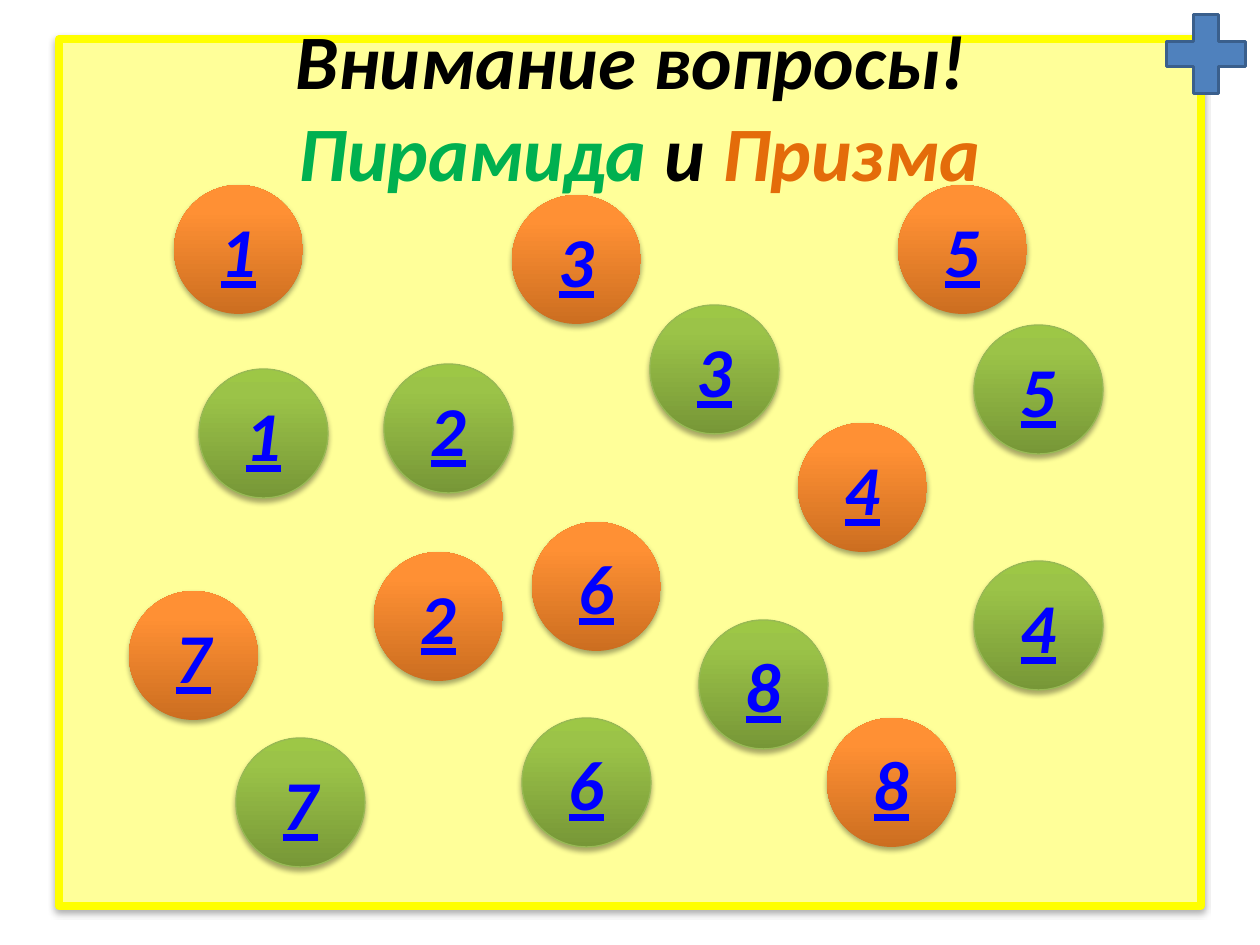
from lxml import etree
from pptx import Presentation
from pptx.dml.color import RGBColor
from pptx.enum.shapes import MSO_SHAPE
from pptx.enum.text import MSO_ANCHOR, MSO_AUTO_SIZE, PP_ALIGN
from pptx.oxml import parse_xml
from pptx.oxml.ns import nsdecls, qn
from pptx.util import Emu, Pt

RECTANGLE, OVAL, PLUS = MSO_SHAPE.RECTANGLE, MSO_SHAPE.OVAL, MSO_SHAPE.MATH_PLUS
MIDDLE, CENTER, NO_FIT = MSO_ANCHOR.MIDDLE, PP_ALIGN.CENTER, MSO_AUTO_SIZE.NONE
PX = 914400 / 126
BALL = 129


def color(hex_code):
    return RGBColor.from_string(hex_code)


def add_shadow(shape, blur, distance, opacity):
    shape.shadow.inherit = False
    effects = shape._element.spPr.find(qn("a:effectLst"))
    shadow = etree.SubElement(effects, qn("a:outerShdw"), blurRad=str(Pt(blur)),
                              dist=str(Pt(distance)), dir="5400000", rotWithShape="0")
    black = etree.SubElement(shadow, qn("a:srgbClr"), val="000000")
    etree.SubElement(black, qn("a:alpha"), val=str(opacity * 1000))


prs = Presentation()
prs.slide_width, prs.slide_height = Emu(int(1260 * PX)), Emu(int(945 * PX))
slide = prs.slides.add_slide(prs.slide_layouts[5])
shapes = slide.shapes

# Yellow panel, behind the title
panel = shapes.add_shape(RECTANGLE, *[Emu(int(v * PX)) for v in (59, 39, 1142, 867)])
panel.fill.solid()
panel.fill.fore_color.rgb = color("FFFF99")
panel.line.color.rgb = color("FFFF00")
panel.line.width = Pt(4.5)
add_shadow(panel, 3.5, 2.2, 32)

# Title
title = shapes.title
title._element.addprevious(panel._element)
title.left, title.top, title.width, title.height = [
    Emu(int(v * PX)) for v in (64, 26, 1134, 158)]
heading = title.text_frame
heading.auto_size = NO_FIT
heading.vertical_anchor = MIDDLE
line = heading.paragraphs[0]
line.alignment = CENTER
for words, hue in [("Внимание вопросы!", "000000"), (" Пирамида ", "00B050"),
                   ("и ", "000000"), ("Призма", "E46C0A")]:
    run = line.add_run()
    run.text = words
    run.font.name, run.font.size = "Calibri", Pt(44)
    run.font.bold = run.font.italic = True
    run.font.color.rgb = color(hue)
    if words.endswith("!"):
        line.add_line_break()

# Question balls: gradient from the bottom up, outline, (number, left, top)
prism = (["CC6E20", "FF9034", "FF9136"], None, [
    (5, 898, 185), (6, 532, 522), (8, 827, 718), (7, 129, 591),
    (3, 512, 195), (4, 798, 423), (2, 374, 552), (1, 174, 185)])
pyramid = (["779737", "9BC348", "9DC746"], "98B955", [
    (5, 974, 325), (6, 522, 718), (8, 699, 620), (7, 236, 738),
    (3, 650, 305), (4, 974, 561), (2, 384, 364), (1, 199, 369)])

for gradient, outline, questions in (prism, pyramid):
    stops = "".join(f'<a:gs pos="{pos}"><a:srgbClr val="{hue}"/></a:gs>'
                    for pos, hue in zip((0, 80000, 100000), gradient))
    for number, left, top in questions:
        ball = shapes.add_shape(OVAL, *[Emu(int(v * PX)) for v in (left, top, BALL, BALL)])
        ball._element.spPr.find(qn("a:prstGeom")).addnext(parse_xml(
            f'<a:gradFill {nsdecls("a")} rotWithShape="1"><a:gsLst>{stops}</a:gsLst>'
            '<a:lin ang="16200000" scaled="0"/></a:gradFill>'))
        if outline:
            ball.line.color.rgb = color(outline)
            ball.line.width = Pt(0.75)
        else:
            ball.line.fill.background()
        add_shadow(ball, 3.1, 1.8, 35)
        label = ball.text_frame
        label.word_wrap = False
        label.vertical_anchor = MIDDLE
        label.paragraphs[0].alignment = CENTER
        run = label.paragraphs[0].add_run()
        run.text = str(number)
        run.font.name, run.font.size = "Calibri", Pt(40)
        run.font.bold = run.font.italic = run.font.underline = True
        run.font.color.rgb = color("0000FF")

# Plus sign in the corner
plus = shapes.add_shape(PLUS, *[Emu(int(v * PX)) for v in (1152, 0, 108, 108)])
plus.shadow.inherit = False
plus.fill.solid()
plus.fill.fore_color.rgb = color("4F81BD")
plus.line.color.rgb = color("3A5F8C")
plus.line.width = Pt(2)

prs.save("out.pptx")
